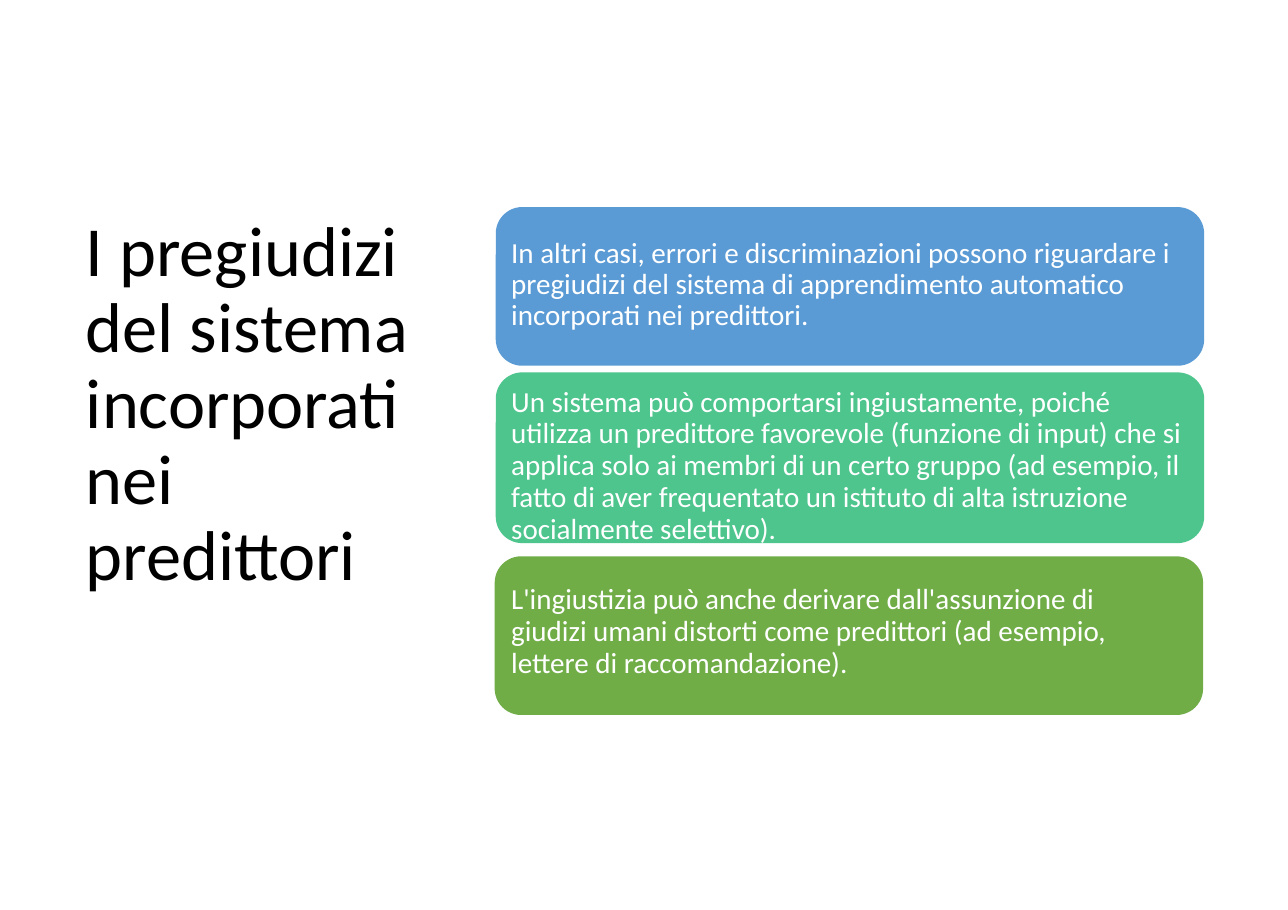
from pptx import Presentation
from pptx.dml.color import RGBColor as RGB
from pptx.enum.shapes import MSO_SHAPE as SHAPE
from pptx.enum.text import MSO_ANCHOR as ANCHOR, PP_ALIGN as ALIGN
from pptx.util import Inches, Pt

COLORS = {"text": "000000", "white": "FFFFFF", "blue": "5B9BD5",
          "teal": "4DC58D", "green": "70AD47"}


class Deck:
    """Hold the style and the current slide, and draw each kind of element."""

    font = "Calibri"
    radius = 0.24

    def __init__(self, width, height):
        self.prs = Presentation()
        self.prs.slide_width = Inches(width)
        self.prs.slide_height = Inches(height)
        self.s = self.prs.slides.add_slide(self.prs.slide_layouts[6])

    def panel(self, left, top, width, height, color):
        sp = self.s.shapes.add_shape(SHAPE.ROUNDED_RECTANGLE, Inches(left), Inches(top),
                                     Inches(width), Inches(height))
        sp.adjustments[0] = self.radius / min(width, height)
        sp.shadow.inherit = False
        sp.fill.solid()
        sp.fill.fore_color.rgb = RGB.from_string(COLORS[color])
        sp.line.fill.background()

    def text(self, left, top, width, height, text, size, color, spacing=0.9):
        tf = self.s.shapes.add_textbox(Inches(left), Inches(top),
                                       Inches(width), Inches(height)).text_frame
        frame = {"word_wrap": True, "vertical_anchor": ANCHOR.TOP, "margin_left": 0,
                 "margin_top": 0, "margin_right": 0, "margin_bottom": 0}
        for name, value in frame.items():
            setattr(tf, name, value)
        p = tf.paragraphs[0]
        p.alignment = ALIGN.LEFT
        p.line_spacing = spacing
        r = p.add_run()
        r.text = text
        for name, value in {"name": self.font, "size": Pt(size)}.items():
            setattr(r.font, name, value)
        r.font.color.rgb = RGB.from_string(COLORS[color])


def main():
    deck = Deck(11.69, 8.26)
    deck.text(0.78, 1.96, 3.2, 3.5,
              "I pregiudizi del sistema incorporati nei predittori", 46, "text")

    cards = [
        (4.5, 1.88, 1.44, "blue", 2.16, 6.1, 0.9,
         "In altri casi, errori e discriminazioni possono riguardare i pregiudizi del "
         "sistema di apprendimento automatico incorporati nei predittori."),
        (4.5, 3.38, 1.55, "teal", 3.51, 6.14, 0.91,
         "Un sistema può comportarsi ingiustamente, poiché utilizza un predittore "
         "favorevole (funzione di input) che si applica solo ai membri di un certo gruppo "
         "(ad esempio, il fatto di aver frequentato un istituto di alta istruzione "
         "socialmente selettivo)."),
        (4.49, 5.05, 1.44, "green", 5.29, 5.8, Pt(21.1),
         "L'ingiustizia può anche derivare dall'assunzione di giudizi umani distorti come "
         "predittori (ad esempio, lettere di raccomandazione)."),
    ]
    for left, top, height, color, text_top, text_width, spacing, text in cards:
        deck.panel(left, top, 6.43, height, color)
        deck.text(4.64, text_top, text_width, top + height - text_top, text, 19,
                  "white", spacing)

    deck.prs.save("out.pptx")


if __name__ == "__main__":
    main()
